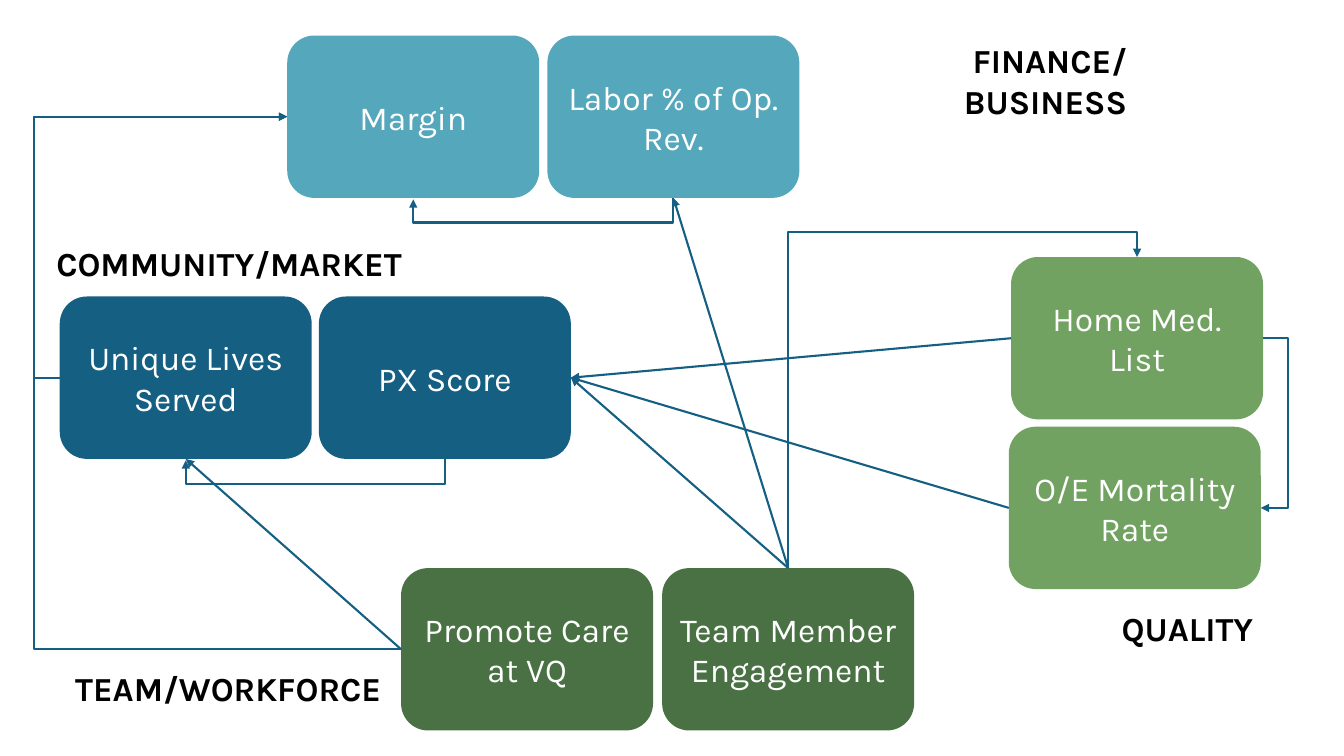
from dataclasses import dataclass

from lxml.etree import SubElement
from pptx import Presentation
from pptx.dml.color import RGBColor
from pptx.enum.shapes import MSO_CONNECTOR, MSO_SHAPE
from pptx.enum.text import MSO_ANCHOR, PP_ALIGN
from pptx.oxml.ns import qn
from pptx.shapes.base import BaseShape
from pptx.slide import Slide
from pptx.util import Pt

BLACK = RGBColor(0x00, 0x00, 0x00)
WHITE = RGBColor(0xFF, 0xFF, 0xFF)
NAVY = RGBColor(0x15, 0x60, 0x82)
TEAL = RGBColor(0x55, 0xA7, 0xBB)
LEAF = RGBColor(0x71, 0xA2, 0x61)
MOSS = RGBColor(0x4A, 0x71, 0x44)

WIDE, HIGH = 180, 116
FONT = {"name": "Karla", "size": Pt(24)}
FRAME = {"word_wrap": True}

Point = tuple[float, float]


@dataclass(frozen=True)
class Label:
    text: str
    left: float
    top: float
    width: float
    align: PP_ALIGN = PP_ALIGN.RIGHT


@dataclass(frozen=True)
class Box:
    text: str
    left: float
    top: float
    fill: RGBColor

    def side(self, name: str) -> Point:
        """Return the middle of the left, right, top or bottom edge."""
        x, y = {"left": (0, 0.5), "right": (1, 0.5),
                "top": (0.5, 0), "bottom": (0.5, 1)}[name]
        return self.left + x * WIDE, self.top + y * HIGH


@dataclass(frozen=True)
class Link:
    """An arrow; bend is the x or y of the middle leg of an elbow."""
    start: Box
    exit: str
    end: Box
    entry: str
    bend: float | None = None


LABELS = [
    Label("TEAM/WORKFORCE", 42.5, 473.8, 236.9),
    Label("FINANCE/BUSINESS", 571.7, 25.2, 240.5),
    Label("QUALITY", 761.8, 430.6, 140.4),
    Label("COMMUNITY/MARKET", 33.1, 169.9, 279.4, PP_ALIGN.LEFT),
]

MARGIN = Box("Margin", 205.2, 25.4, TEAL)
LABOR = Box("Labor % of Op. Rev.", 391, 25.4, TEAL)
LIVES = Box("Unique Lives Served", 42.7, 211.8, NAVY)
SCORE = Box("PX Score", 227.8, 211.8, NAVY)
MEDS = Box("Home Med. List", 722.2, 183.6, LEAF)
DEATHS = Box("O/E Mortality Rate", 720.6, 304.8, LEAF)
CARE = Box("Promote Care at VQ", 286.5, 405.8, MOSS)
TEAM = Box("Team Member Engagement", 473, 405.8, MOSS)
BOXES = [MARGIN, LABOR, LIVES, SCORE, MEDS, DEATHS, CARE, TEAM]

LINKS = [
    Link(MEDS, "right", DEATHS, "right", 920.2),
    Link(TEAM, "top", MEDS, "top", 165.6),
    Link(DEATHS, "left", SCORE, "right"),
    Link(MEDS, "left", SCORE, "right"),
    Link(TEAM, "top", SCORE, "right"),
    Link(SCORE, "bottom", LIVES, "bottom", 345.8),
    Link(CARE, "left", LIVES, "bottom"),
    Link(LIVES, "left", MARGIN, "left", 24.5),
    Link(CARE, "left", MARGIN, "left", 24.5),
    Link(LABOR, "bottom", MARGIN, "bottom", 159.1),
    Link(TEAM, "top", LABOR, "bottom"),
]


def write(shape: BaseShape, text: str, align: PP_ALIGN,
          color: RGBColor, bold: bool, anchor: MSO_ANCHOR) -> None:
    frame = shape.text_frame
    frame.text = text
    para = frame.paragraphs[0]
    para.alignment = align
    font = para.runs[0].font
    font.color.rgb = color
    for item, form in ((font, FONT | {"bold": bold}),
                       (frame, FRAME | {"vertical_anchor": anchor})):
        for key, value in form.items():
            setattr(item, key, value)


def add_label(slide: Slide, label: Label) -> None:
    shape = slide.shapes.add_textbox(
        Pt(label.left), Pt(label.top), Pt(label.width), Pt(36))
    write(shape, label.text, label.align, BLACK, True, MSO_ANCHOR.TOP)


def add_box(slide: Slide, box: Box) -> None:
    shape = slide.shapes.add_shape(
        MSO_SHAPE.ROUNDED_RECTANGLE,
        Pt(box.left), Pt(box.top), Pt(WIDE), Pt(HIGH))
    shape.shadow.inherit = False
    shape.fill.solid()
    shape.fill.fore_color.rgb = box.fill
    shape.line.fill.background()
    write(shape, box.text, PP_ALIGN.CENTER, WHITE, False, MSO_ANCHOR.MIDDLE)


def add_link(slide: Slide, link: Link) -> None:
    """Draw an arrow; an elbow that leaves up or down is turned by 90°."""
    x1, y1 = link.start.side(link.exit)
    x2, y2 = link.end.side(link.entry)
    kind = MSO_CONNECTOR.STRAIGHT
    ratio, turn = 0.0, False
    if link.bend is not None:
        kind = MSO_CONNECTOR.ELBOW
        turn = link.exit in ("top", "bottom")
        if turn:
            if y1 == y2:
                y2 += 1  # the bend is a share of the height, so it needs one
            ratio = (link.bend - y1) / (y2 - y1)
            mid_x, mid_y = (x1 + x2) / 2, (y1 + y2) / 2
            half_x, half_y = (y2 - y1) / 2, (x1 - x2) / 2
            x1, y1 = mid_x - half_x, mid_y - half_y
            x2, y2 = mid_x + half_x, mid_y + half_y
        else:
            ratio = (link.bend - x1) / (x2 - x1)
    line = slide.shapes.add_connector(kind, Pt(x1), Pt(y1), Pt(x2), Pt(y2))
    line.line.color.rgb = NAVY
    line.line.width = Pt(1.5)
    props = line._element.spPr
    SubElement(props.find(qn("a:ln")), qn("a:tailEnd"), type="triangle")
    SubElement(props, qn("a:effectLst"))
    if turn:
        props.find(qn("a:xfrm")).set("rot", "5400000")
    if link.bend is not None:
        guides = props.find(qn("a:prstGeom")).find(qn("a:avLst"))
        SubElement(guides, qn("a:gd"), name="adj1",
                   fmla=f"val {round(ratio * 100000)}")


def main() -> None:
    deck = Presentation()
    deck.slide_width, deck.slide_height = Pt(960), Pt(540)
    slide = deck.slides.add_slide(deck.slide_layouts[6])
    for label in LABELS:
        add_label(slide, label)
    for box in BOXES:
        add_box(slide, box)
    for link in LINKS:
        add_link(slide, link)
    deck.save("out.pptx")


if __name__ == "__main__":
    main()
